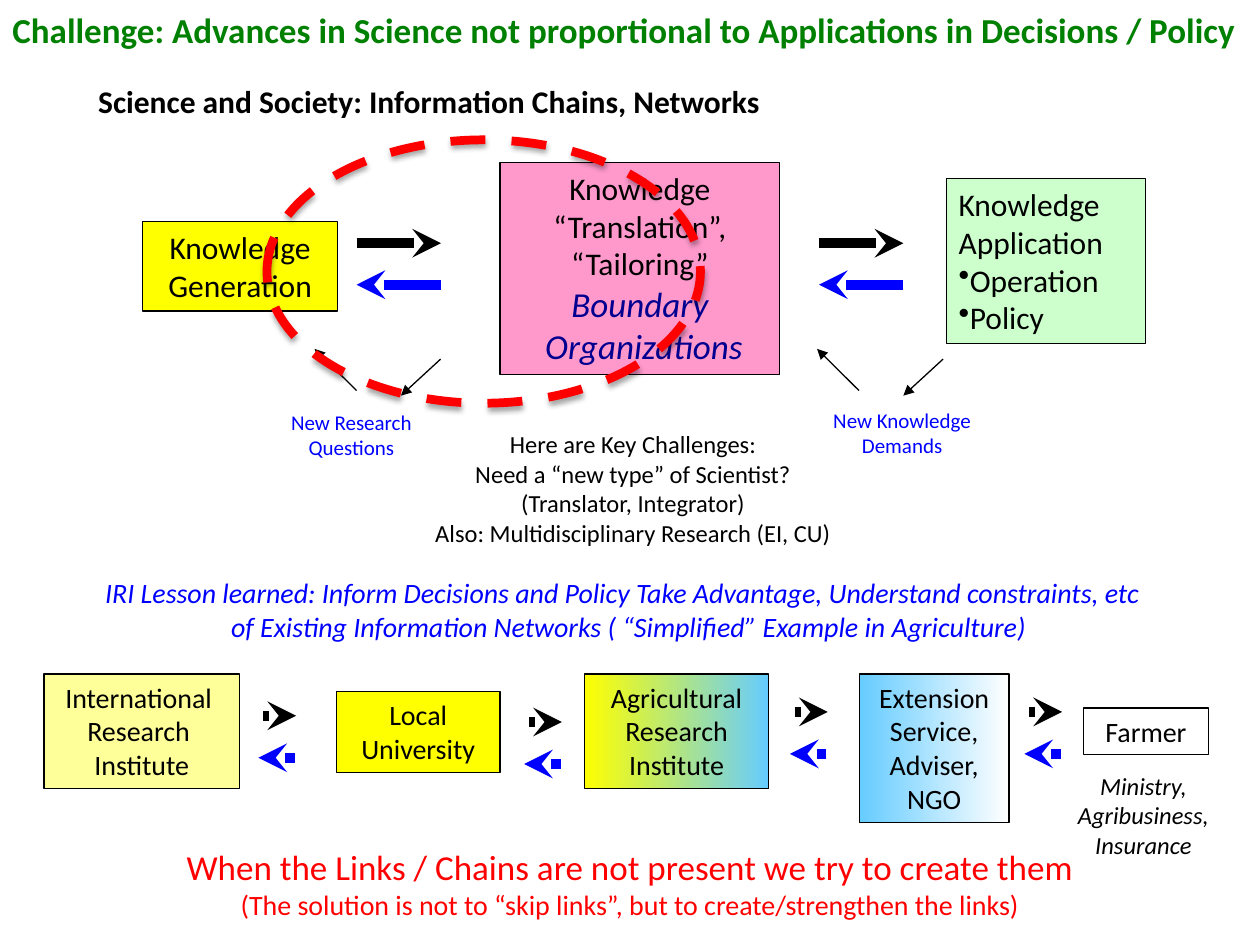
"""Build the slide on information chains between science and society."""
import pptx
import pptx.dml.color
import pptx.enum.dml
import pptx.enum.shapes
import pptx.enum.text
import pptx.oxml
import pptx.oxml.ns
import pptx.util

Pt = pptx.util.Pt
SHAPE = pptx.enum.shapes.MSO_SHAPE
ALIGN = pptx.enum.text.PP_ALIGN

HUES = {
    "black": "000000", "white": "FFFFFF", "red": "FF0000", "blue": "0000FF",
    "green": "008000", "navy": "000090", "yellow": "FFFF00", "cream": "FFFF99",
    "pink": "FF99CC", "mint": "CCFFCC", "sky": "66CCFF",
}
FORMS = {
    "title": {"size": 20, "bold": True, "hue": "green"},
    "head": {"size": 18, "bold": True, "hue": "black"},
    "stage": {"size": 18, "hue": "black"},
    "bound": {"size": 20, "italic": True, "hue": "navy"},
    "link": {"size": 16, "hue": "black"},
    "need": {"size": 12, "hue": "blue"},
    "note": {"size": 14, "hue": "black"},
    "aside": {"size": 14, "italic": True, "hue": "black"},
    "lesson": {"size": 16, "italic": True, "hue": "blue"},
    "close": {"size": 20, "hue": "red"},
    "small": {"size": 16, "hue": "red"},
}

BOXES = [
    ((25.2, 385.2, 111.6, 65.5), ["cream"], [("link", ["International ", "Research ", "Institute"])]),
    ((192.2, 395.3, 93.6, 46.1), ["yellow"], [("link", ["Local", "University"])]),
    ((334.1, 385.2, 105.1, 65.5), ["yellow", "sky"], [("link", ["Agricultural", "Research", "Institute"])]),
    ((491, 385.2, 85.7, 85), ["sky", "white"], [("link", ["Extension", "Service,", "Adviser,", "NGO"])]),
    ((619.2, 404.6, 71.3, 26.6), [], [("link", ["Farmer"])]),
    ((81.4, 126.7, 111.6, 51.1), ["yellow"], [("stage", ["Knowledge", "Generation"])]),
    ((285.8, 92.9, 159.8, 121), ["pink"], [
        ("stage", ["Knowledge", "“Translation”,", "“Tailoring”"]),
        ("bound", ["Boundary", " Organizations"])]),
]
USES = ((540.7, 102.2, 113.8, 94.3), ["mint"],
        [("stage", ["Knowledge", "Application", "•Operation", "•Policy"])])
NOTES = [
    ((152.6, 230.4, 96.5, 36), [("need", ["New Research", "Questions"])]),
    ((464.4, 229.2, 102.2, 36), [("need", ["New Knowledge", "Demands"])]),
    ((240.5, 241.9, 242.6, 74.9), [("note", [
        "Here are Key Challenges:", "Need a “new type” of Scientist?",
        "(Translator, Integrator)", "Also: Multidisciplinary Research (EI, CU)"])]),
    ((75.6, 479.5, 568.8, 51.1), [
        ("close", ["When the Links / Chains are not present we try to create them"]),
        ("small", ["(The solution is not to “skip links”, but to create/strengthen the links)"])]),
    ((49.7, 325.4, 619.2, 46.1), [("lesson", [
        "IRI Lesson learned: Inform Decisions and Policy Take Advantage, Understand constraints, etc  ",
        "of Existing Information Networks ( “Simplified” Example in Agriculture)"])]),
    ((601.9, 437, 103, 58.3), [("aside", ["Ministry,", "Agribusiness,", "Insurance"])]),
]
HEAD = ((13, 43.2, 694.8, 36), [("head", ["Science and Society: Information Chains, Networks"])])
TITLE = ((0, 1.4, 720.7, 31.7), [
    ("title", ["Challenge: Advances in Science not proportional to Applications in Decisions / Policy"])])

WIDE = [(203.8, 139), (468, 139)]
SHORT = [(150.5, 409), (302.4, 412.6), (454.3, 406.8), (588.2, 406.8)]
LOOPS = [203.8, 490.9]
RING = (152.6, 79.9, 247.7, 150.5)


def color(hue):
    return pptx.dml.color.RGBColor.from_string(HUES[hue])


def node(tag, inner="", **attrs):
    pairs = "".join(f' {key}="{val}"' for key, val in attrs.items())
    names = pptx.oxml.ns.nsdecls("a")
    return pptx.oxml.parse_xml(f"<a:{tag} {names}{pairs}>{inner}</a:{tag}>")


def write(shape, parts, align=ALIGN.CENTER, wrap=False, inset=0):
    frame = shape.text_frame
    setup = {"word_wrap": wrap, "auto_size": pptx.enum.text.MSO_AUTO_SIZE.SHAPE_TO_FIT_TEXT,
             "vertical_anchor": pptx.enum.text.MSO_ANCHOR.TOP}
    for key, val in setup.items():
        setattr(frame, key, val)
    lines = [(form, text) for form, texts in parts for text in texts]
    for num, (form, text) in enumerate(lines):
        para = frame.add_paragraph() if num else frame.paragraphs[0]
        para.alignment = align
        props = para._p.get_or_add_pPr()
        if inset:
            para.level = 1
            props.set("marL", str(Pt(inset)))
            props.set("indent", "0")
        if text.startswith("•"):
            props.append(node("buChar", char="•"))
        run = para.add_run()
        run.text = text.lstrip("•")
        run.font.name = "Calibri"
        for key, val in FORMS[form].items():
            if key == "hue":
                run.font.color.rgb = color(val)
            else:
                setattr(run.font, key, Pt(val) if key == "size" else val)


def add_box(slide, place, hues, parts, align=ALIGN.CENTER):
    box = slide.shapes.add_shape(SHAPE.RECTANGLE, *map(Pt, place))
    box.shadow.inherit = False
    if len(hues) == 2:
        box.fill.gradient()
        box.fill.gradient_angle = 0
        for stop, hue in zip(box.fill.gradient_stops, hues):
            stop.color.rgb = color(hue)
    elif hues:
        box.fill.solid()
        box.fill.fore_color.rgb = color(hues[0])
    else:
        box.fill.background()
    box.line.color.rgb = color("black")
    box.line.width = Pt(0.75)
    write(box, parts, align)


def add_note(slide, place, parts, **opts):
    write(slide.shapes.add_textbox(*map(Pt, place)), parts, **opts)


def add_line(slide, start, end, hue="black", width=0.75, tip="triangle"):
    kind = pptx.enum.shapes.MSO_CONNECTOR.STRAIGHT
    line = slide.shapes.add_connector(kind, *map(Pt, start + end))
    line.line.color.rgb = color(hue)
    line.line.width = Pt(width)
    line.line._get_or_add_ln().append(node("tailEnd", type=tip))
    line._element.spPr.append(node("effectLst"))


def add_pair(slide, left, top, size, back, drop):
    thick = {"width": 5.5, "tip": "stealth"}
    add_line(slide, (left, top), (left + size, top), **thick)
    low = top + drop
    add_line(slide, (left + size - back / 4, low), (left - back, low), "blue", **thick)


def add_ring(slide):
    ring = slide.shapes.add_shape(SHAPE.OVAL, *map(Pt, RING))
    ring.fill.background()
    ring.line.color.rgb = color("red")
    ring.line.width = Pt(5)
    ring.line.dash_style = pptx.enum.dml.MSO_LINE.DASH
    shade = (f'<a:outerShdw blurRad="{Pt(3.1)}" dist="{Pt(1.8)}" dir="5400000" rotWithShape="0">'
             f'<a:srgbClr val="{HUES["black"]}"><a:alpha val="35000"/></a:srgbClr></a:outerShdw>')
    ring._element.spPr.append(node("effectLst", shade))


def main():
    deck = pptx.Presentation()
    deck.slide_width, deck.slide_height = Pt(720), Pt(540)
    slide = deck.slides.add_slide(deck.slide_layouts[6])
    for box in BOXES:
        add_box(slide, *box)
    add_box(slide, *USES, align=ALIGN.LEFT)
    for left, top in WIDE:
        add_pair(slide, left, top, 48.2, 0, 23.7)
    for left, top in SHORT:
        add_pair(slide, left, top, 18.7, 2.9, 24)
    for left in LOOPS:
        add_line(slide, (left + 48, 205.2), (left + 25.3, 226.1))
        add_line(slide, (left, 223.2), (left - 24, 199.4))
    for note in NOTES:
        add_note(slide, *note)
    add_note(slide, *HEAD, align=ALIGN.LEFT, wrap=True, inset=36)
    add_note(slide, *TITLE, align=ALIGN.LEFT)
    add_ring(slide)
    deck.save("out.pptx")


if __name__ == "__main__":
    main()
